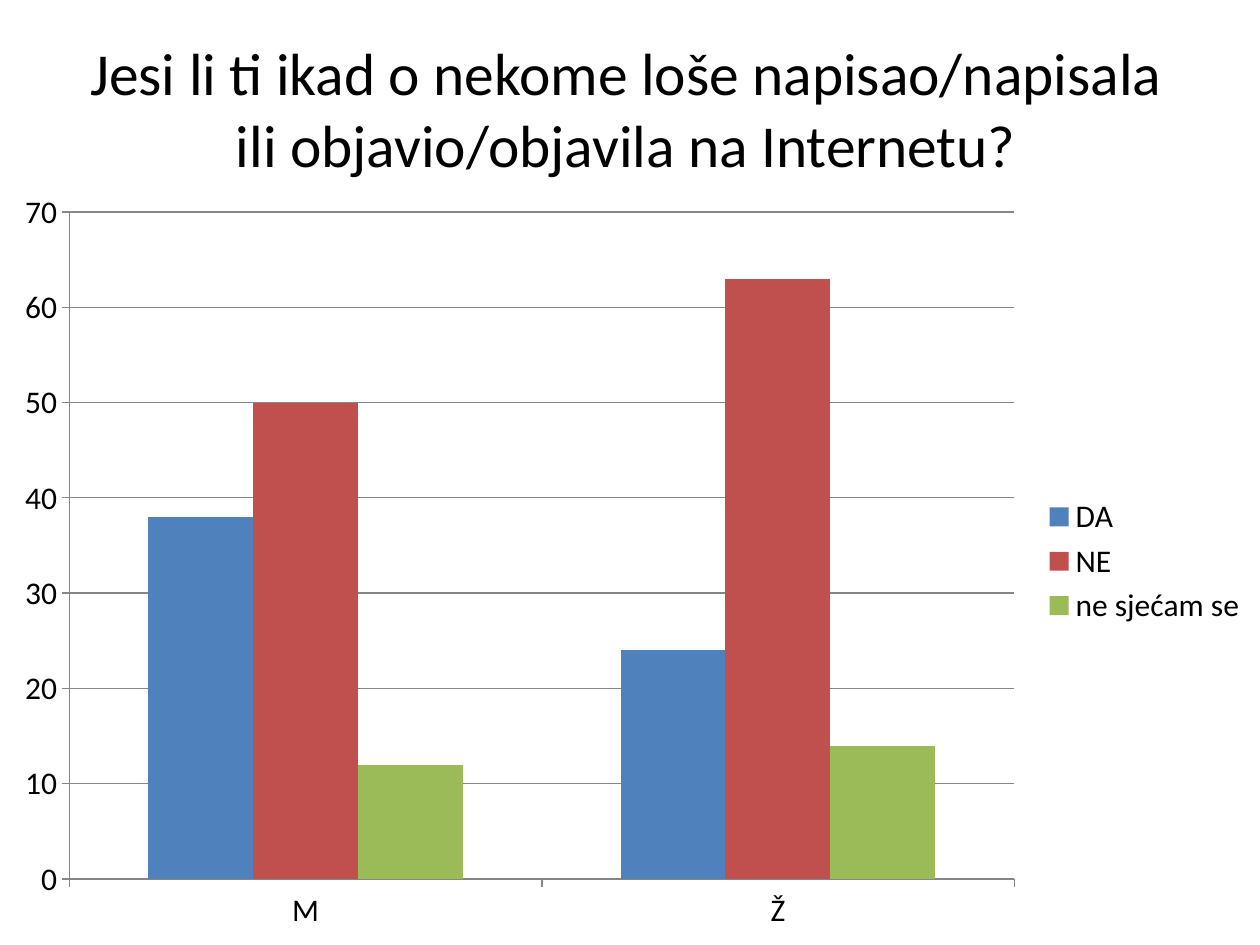
from pptx import Presentation
from pptx.chart.data import CategoryChartData
from pptx.dml.color import RGBColor
from pptx.enum.chart import XL_CHART_TYPE, XL_LEGEND_POSITION, XL_TICK_MARK
from pptx.enum.text import MSO_ANCHOR, PP_ALIGN
from pptx.util import Cm, Pt

COLUMNS = XL_CHART_TYPE.COLUMN_CLUSTERED
LEGEND_RIGHT = XL_LEGEND_POSITION.RIGHT
TICK_OUTSIDE = XL_TICK_MARK.OUTSIDE
MIDDLE = MSO_ANCHOR.MIDDLE
CENTER = PP_ALIGN.CENTER

FONT = "Calibri"
BLACK = RGBColor(0x00, 0x00, 0x00)
GRAY = RGBColor(0x86, 0x86, 0x86)
BLUE = RGBColor(0x4F, 0x81, 0xBD)
RED = RGBColor(0xC0, 0x50, 0x4D)
GREEN = RGBColor(0x9B, 0xBB, 0x59)

TITLE = "Jesi li ti ikad o nekome loše napisao/napisala ili objavio/objavila na Internetu?"
GENDERS = ["M", "Ž"]
ANSWERS = [
    ("DA", [38, 24], BLUE),
    ("NE", [50, 63], RED),
    ("ne sjećam se", [12, 14], GREEN),
]


def style_font(font, size):
    font.name = FONT
    font.size = Pt(size)
    font.color.rgb = BLACK


def style_line(line):
    line.color.rgb = GRAY
    line.width = Pt(0.75)


def add_title(s, text):
    sp = s.shapes.add_textbox(Cm(1.19), Cm(0.58), Cm(22.86), Cm(3.18))
    tf = sp.text_frame
    tf.word_wrap = True
    tf.vertical_anchor = MIDDLE
    tf.text = text
    p = tf.paragraphs[0]
    p.alignment = CENTER
    style_font(p.runs[0].font, 34)


def add_answer_chart(s):
    data = CategoryChartData()
    data.categories = GENDERS
    for name, values, _ in ANSWERS:
        data.add_series(name, values)
    frame = s.shapes.add_chart(COLUMNS, Cm(0), Cm(3.58), Cm(25.4), Cm(15.47), data)
    chart = frame.chart
    chart.has_title = False
    style_font(chart.font, 18)

    # Columns
    plot = chart.plots[0]
    plot.gap_width = 150
    plot.overlap = 0
    plot.vary_by_categories = False
    for series, (_, _, color) in zip(plot.series, ANSWERS):
        series.format.fill.solid()
        series.format.fill.fore_color.rgb = color

    # Axes and gridlines
    for axis in (chart.category_axis, chart.value_axis):
        axis.major_tick_mark = TICK_OUTSIDE
        style_line(axis.format.line)
    axis = chart.value_axis
    axis.minimum_scale = 0
    axis.maximum_scale = 70
    axis.major_unit = 10
    axis.has_major_gridlines = True
    style_line(axis.major_gridlines.format.line)

    # Legend
    chart.has_legend = True
    chart.legend.position = LEGEND_RIGHT
    chart.legend.include_in_layout = False


def main():
    prs = Presentation()
    prs.slide_width = Cm(25.4)
    prs.slide_height = Cm(19.05)
    s = prs.slides.add_slide(prs.slide_layouts[6])
    add_title(s, TITLE)
    add_answer_chart(s)
    prs.save("out.pptx")


if __name__ == "__main__":
    main()
